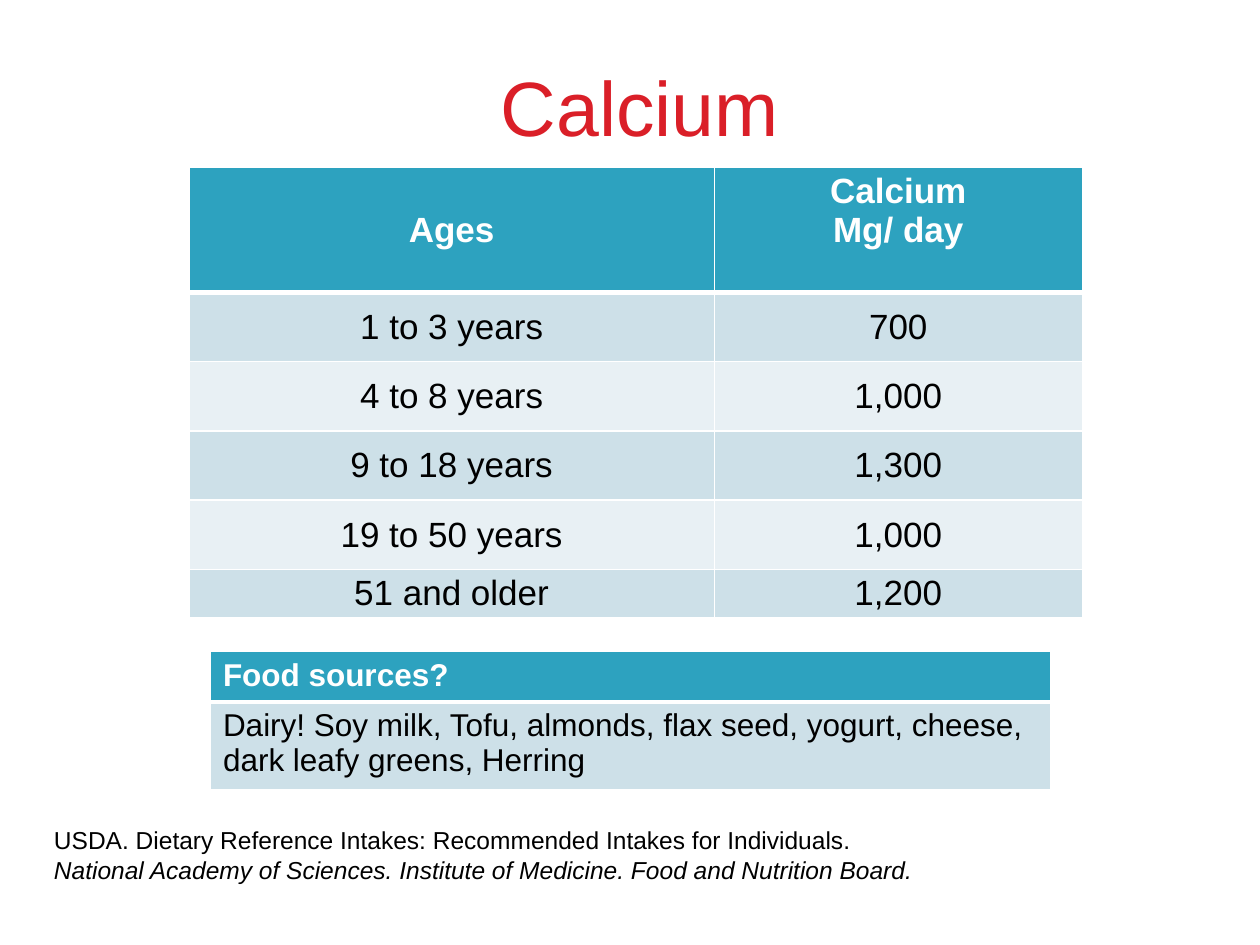
from pptx import Presentation
from pptx.dml.color import RGBColor
from pptx.enum import text
from pptx.oxml import parse_xml
from pptx.oxml.ns import nsdecls
from pptx.util import Inches, Pt

TEAL, PALE, PALER = "2DA2BF", "CDE0E8", "E8F0F4"
WHITE, BLACK, RED = "FFFFFF", "000000", "DA1F28"


def style_font(font, size, color, bold=False):
    font.name, font.size, font.bold = "Arial", Pt(size), bold
    font.color.rgb = RGBColor.from_string(color)


def add_styled_table(slide, rows, left, top, widths, heights, size, centred):
    frame = slide.shapes.add_table(len(rows), len(widths), Inches(left), Inches(top),
                                   Inches(sum(widths)), Inches(sum(heights)))
    table = frame.table
    for column, width in zip(table.columns, widths):
        column.width = Inches(width)
    for r, values in enumerate(rows):
        table.rows[r].height = Inches(heights[r])
        for c, value in enumerate(values):
            cell = table.cell(r, c)
            cell.text_frame.text = value
            for paragraph in cell.text_frame.paragraphs:
                if centred:
                    paragraph.alignment = text.PP_ALIGN.CENTER
                for run in paragraph.runs:
                    style_font(run.font, size, BLACK if r else WHITE, r == 0)
            if centred:
                cell.vertical_anchor = text.MSO_ANCHOR.MIDDLE
                cell.margin_left = cell.margin_right = 0
                cell.margin_top = cell.margin_bottom = 0
            # White borders, thicker around the header's lower edge
            for side in "LRTB":
                thick = (r, side) in ((0, "B"), (1, "T"))
                cell._tc.get_or_add_tcPr().append(parse_xml(
                    f'<a:ln{side} {nsdecls("a")} w="{Pt(3 if thick else 1)}"><a:solidFill>'
                    f'<a:srgbClr val="{WHITE}"/></a:solidFill></a:ln{side}>'))
            fill = TEAL if r == 0 else PALE if r % 2 else PALER
            cell.fill.solid()
            cell.fill.fore_color.rgb = RGBColor.from_string(fill)
    return table


prs = Presentation()
prs.slide_width, prs.slide_height = Inches(10), Inches(7.5)
slide = prs.slides.add_slide(prs.slide_layouts[5])

# Title
title = slide.shapes.title
title.left, title.top = Inches(0.58), Inches(0.42)
title.width, title.height = Inches(9), Inches(1.25)
title.text_frame.text = "Calcium"
title.text_frame.vertical_anchor = text.MSO_ANCHOR.TOP
heading = title.text_frame.paragraphs[0]
heading.alignment = text.PP_ALIGN.CENTER
style_font(heading.runs[0].font, 44, RED)

# Daily intake by age
intakes = [
    ("Ages", "Calcium\nMg/ day"),
    ("1 to 3 years", "700"),
    ("4 to 8 years", "1,000"),
    ("9 to 18 years", "1,300"),
    ("19 to 50 years", "1,000"),
    ("51 and older", "1,200"),
]
intake_table = add_styled_table(slide, intakes, 1.5, 1.33, [4.17, 2.92],
                                [0.99] + [0.55] * 4 + [0.38], 20, True)
intake_table.cell(0, 1).margin_bottom = Inches(0.31)

# Food sources
foods = [
    ("Food sources?",),
    ("Dairy! Soy milk, Tofu, almonds, flax seed, yogurt, cheese, "
     "dark leafy greens, Herring",),
]
add_styled_table(slide, foods, 1.67, 5.17, [6.67], [0.4, 0.7], 18, False)

# Reference
reference = slide.shapes.add_textbox(Inches(0.33), Inches(6.5), Inches(7.17), Inches(0.88))
reference.text_frame.word_wrap = True
citation = reference.text_frame.paragraphs[0]
for words, italic in (
    ("USDA. Dietary Reference Intakes: Recommended Intakes for Individuals. ", False),
    ("National Academy of Sciences. Institute of Medicine. Food and Nutrition Board.", True),
):
    run = citation.add_run()
    run.text = words
    style_font(run.font, 14, BLACK)
    run.font.italic = italic

prs.save("out.pptx")
